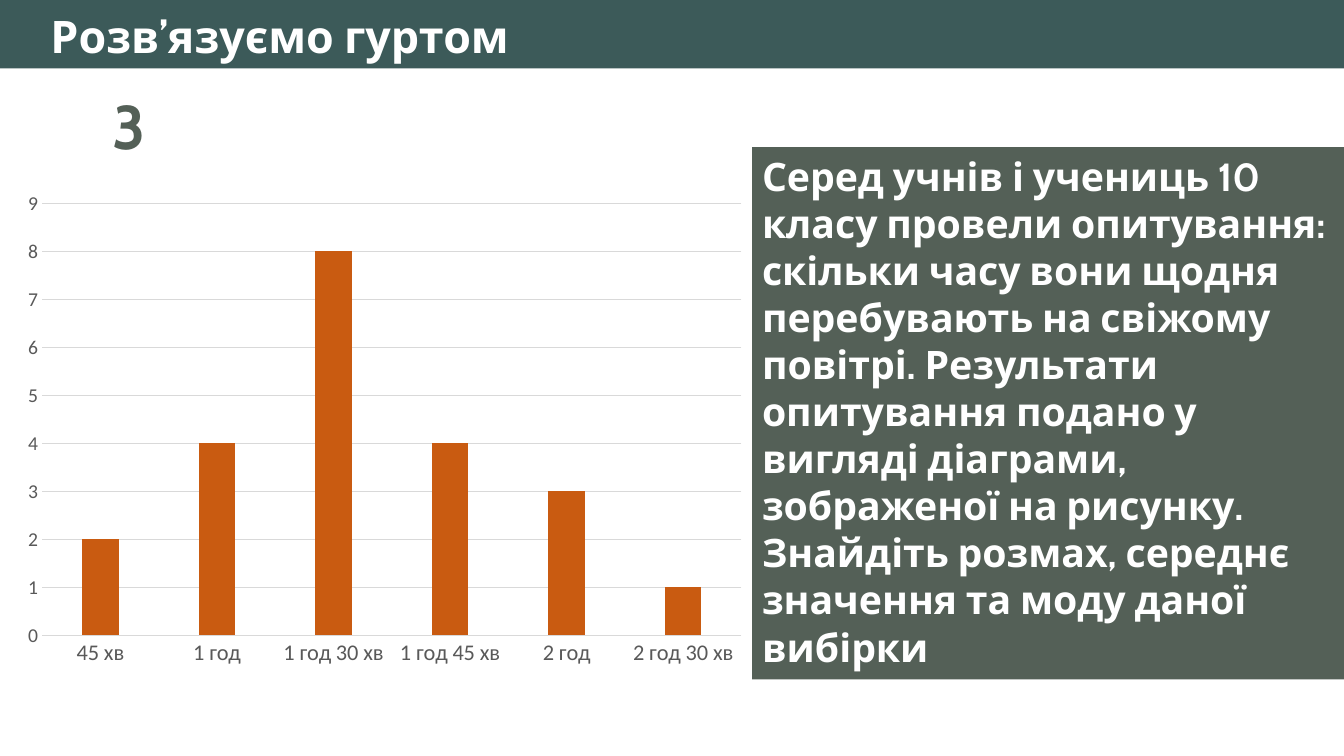
from dataclasses import dataclass

from lxml.etree import SubElement
from pptx import Presentation
from pptx.chart.data import CategoryChartData
from pptx.dml.color import RGBColor
from pptx.enum.chart import XL_CHART_TYPE as Chart, XL_TICK_MARK as Tick
from pptx.enum.shapes import MSO_SHAPE as Shape
from pptx.enum.text import MSO_ANCHOR as Anchor, MSO_AUTO_SIZE as Fit, PP_ALIGN as Align
from pptx.oxml.ns import qn
from pptx.util import Inches, Pt

WIDTH, HEIGHT = Inches(13.33), Inches(7.5)
COLUMN, ROW = WIDTH / 100, HEIGHT / 100
TEAL, MOSS, WHITE, ORANGE = "3C5A59", "546057", "FFFFFF", "C95B11"
GREY, RULE = "595959", "D9D9D9"
TASK = (
    "Серед учнів і учениць 10 класу провели опитування: скільки часу вони щодня "
    "перебувають на свіжому повітрі. Результати опитування подано у вигляді діаграми, "
    "зображеної на рисунку. Знайдіть розмах, середнє значення та моду даної вибірки"
)
ANSWERS = {"45 хв": 2, "1 год": 4, "1 год 30 хв": 8, "1 год 45 хв": 4, "2 год": 3, "2 год 30 хв": 1}


@dataclass(frozen=True)
class Box:
    """Place on a grid of 100 columns and 100 rows."""

    col: float
    row: float
    cols: float
    rows: float

    def emu(self) -> tuple[int, int, int, int]:
        return (int(self.col * COLUMN), int(self.row * ROW),
                int(self.cols * COLUMN), int(self.rows * ROW))


@dataclass(frozen=True)
class Label:
    """Wording and its format."""

    text: str
    size: int
    color: str = WHITE
    align: Align = Align.LEFT


BAR = Box(0, 0, 100, 9.07)
TITLE = Box(3, 0.53, 92.86, 8.53)
NUMBER = Box(5.77, 10.93, 7.73, 11.2)
PANEL = Box(55.96, 19.47, 44.04, 70.4)
CHART = Box(0.98, 24, 55.29, 65.47)


def rgb(color: str) -> RGBColor:
    return RGBColor.from_string(color)


def set_font(font, name: str, size: int, color: str, bold: bool = False) -> None:
    font.name, font.size, font.bold = name, Pt(size), bold
    font.color.rgb = rgb(color)


def write(sp, label: Label) -> None:
    tf = sp.text_frame
    tf.text = label.text
    tf.word_wrap, tf.auto_size = True, Fit.SHAPE_TO_FIT_TEXT
    tf.vertical_anchor = Anchor.TOP
    p = tf.paragraphs[0]
    p.alignment = label.align
    set_font(p.font, "Cabin", label.size, label.color, True)


def add_block(s, box: Box, color: str):
    sp = s.shapes.add_shape(Shape.RECTANGLE, *box.emu())
    sp.shadow.inherit = False
    sp.fill.solid()
    sp.fill.fore_color.rgb = rgb(color)
    sp.line.fill.background()
    return sp


def add_title(s, box: Box, label: Label) -> None:
    sp = s.shapes.title
    sp.left, sp.top, sp.width, sp.height = box.emu()
    write(sp, label)


def set_line(line, color: str) -> None:
    line.color.rgb, line.width = rgb(color), Pt(0.75)


def add_answers_chart(s, box: Box) -> None:
    data = CategoryChartData()
    data.categories = ANSWERS.keys()
    data.add_series("Series 1", ANSWERS.values())
    chart = s.shapes.add_chart(Chart.COLUMN_CLUSTERED, *box.emu(), data).chart
    chart.has_legend = chart.has_title = False
    set_font(chart.font, "Calibri", 10, "000000")

    plot = chart.plots[0]
    plot.gap_width, plot.overlap, plot.vary_by_categories = 219, -27, False
    fill = plot.series[0].format.fill
    fill.solid()
    fill.fore_color.rgb = rgb(ORANGE)

    for axis, size in ((chart.category_axis, 16), (chart.value_axis, 14)):
        axis.major_tick_mark = axis.minor_tick_mark = Tick.NONE
        set_font(axis.tick_labels.font, "Calibri", size, GREY)
    set_line(chart.category_axis.format.line, RULE)
    values = chart.value_axis
    values.minimum_scale, values.maximum_scale, values.major_unit = 0, 9, 1
    values.format.line.fill.background()
    set_line(values.major_gridlines.format.line, RULE)


def main() -> None:
    prs = Presentation()
    prs.slide_width, prs.slide_height = WIDTH, HEIGHT
    s = prs.slides.add_slide(prs.slide_layouts[5])

    bar = add_block(s, BAR, TEAL)
    s.shapes.title.element.addprevious(bar.element)
    add_title(s, TITLE, Label("Розв’язуємо гуртом", 32))
    write(s.shapes.add_textbox(*NUMBER.emu()), Label("3", 44, MOSS, Align.CENTER))
    write(add_block(s, PANEL, MOSS), Label(TASK, 28))
    add_answers_chart(s, CHART)
    prs.save("out.pptx")


if __name__ == "__main__":
    main()
